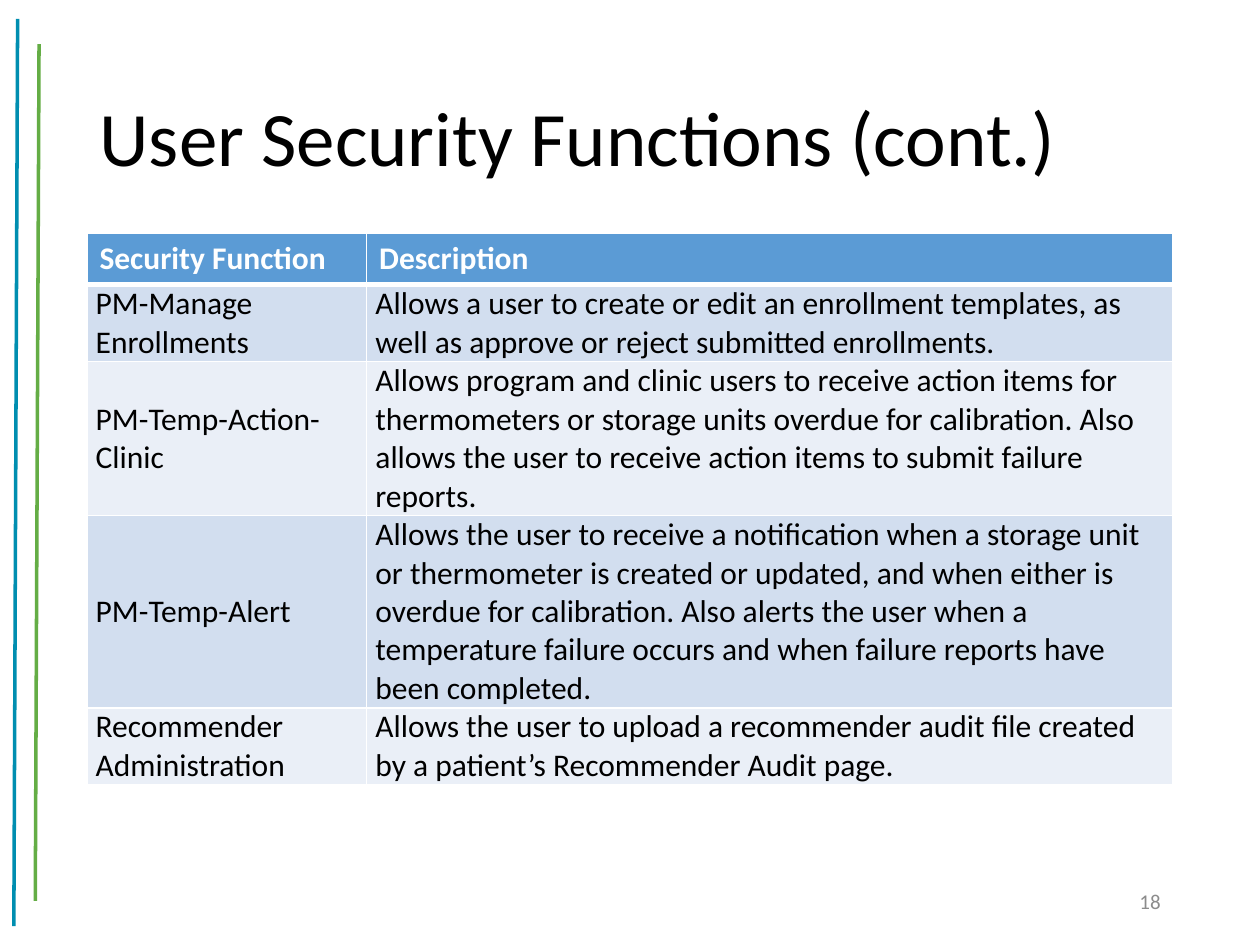
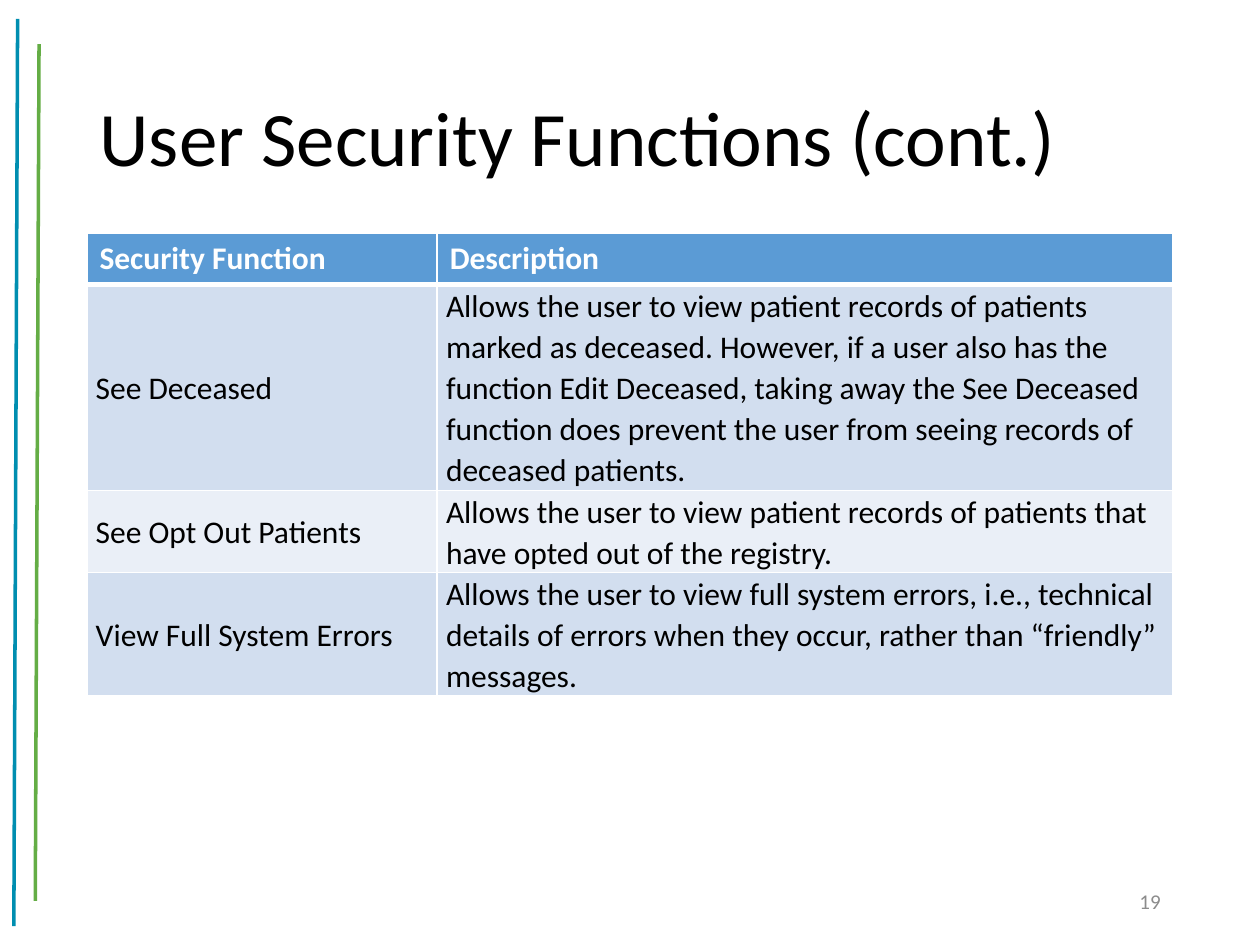
from lxml import etree
from pptx import Presentation
from pptx.dml.color import RGBColor
from pptx.enum.shapes import MSO_CONNECTOR
from pptx.enum.text import MSO_ANCHOR, MSO_AUTO_SIZE, PP_ALIGN
from pptx.oxml.ns import qn
from pptx.util import Inches, Pt

STRAIGHT = MSO_CONNECTOR.STRAIGHT
MIDDLE, TOP = MSO_ANCHOR.MIDDLE, MSO_ANCHOR.TOP
LEFT, RIGHT = PP_ALIGN.LEFT, PP_ALIGN.RIGHT
NO_AUTOFIT = MSO_AUTO_SIZE.NONE

FONT = "Calibri"
BLACK, WHITE, GREY = "000000", "FFFFFF", "8C8C8C"
TEAL, GREEN = "008EB0", "64AD45"
HEADER_FILL, BAND_FILLS = "5B9BD5", ("D2DEEF", "EAEFF7")

TITLE_LAYOUT = 5
TITLE_BOX = (0.69, 0.4, 8.62, 1.45)
TABLE_BOX = (0.69, 1.85, 8.62)
NUMBER_BOX = (7.06, 6.95, 2.25, 0.4)
SIDE_RULES = (
    (0.14, 0.15, 0.11, 7.35, TEAL),
    (0.31, 0.35, 0.28, 7.15, GREEN),
)
HEADER_HEIGHT, LINE_HEIGHT = 0.41, 0.3

TITLE = "User Security Functions (cont.)"
HEADINGS = ("Security Function", "Description")

PROGRAM_FUNCTIONS = (
    ("PM-Manage Enrollments",
     "Allows a user to create or edit an enrollment templates, as well as "
     "approve or reject submitted enrollments.", 2),
    ("PM-Temp-Action-Clinic",
     "Allows program and clinic users to receive action items for thermometers "
     "or storage units overdue for calibration. Also allows the user to receive "
     "action items to submit failure reports.", 4),
    ("PM-Temp-Alert",
     "Allows the user to receive a notification when a storage unit or "
     "thermometer is created or updated, and when either is overdue for "
     "calibration. Also alerts the user when a temperature failure occurs and "
     "when failure reports have been completed.", 5),
    ("Recommender Administration",
     "Allows the user to upload a recommender audit file created by a patient’s "
     "Recommender Audit page.", 2),
)
VIEW_FUNCTIONS = (
    ("See Deceased",
     "Allows the user to view patient records of patients marked as deceased. "
     "However, if a user also has the function Edit Deceased, taking away the "
     "See Deceased function does prevent the user from seeing records of "
     "deceased patients.", 5),
    ("See Opt Out Patients",
     "Allows the user to view patient records of patients that have opted out "
     "of the registry.", 2),
    ("View Full System Errors",
     "Allows the user to view full system errors, i.e., technical details of "
     "errors when they occur, rather than “friendly” messages.", 3),
)


def rgb(value):
    return RGBColor.from_string(value)


def style_paragraph(paragraph, size, color, bold=False, align=LEFT, spacing=None):
    paragraph.alignment = align
    paragraph.line_spacing = spacing
    font = paragraph.font
    font.name, font.size, font.bold = FONT, Pt(size), bold
    font.color.rgb = rgb(color)


def add_side_rules(slide):
    for x1, y1, x2, y2, color in SIDE_RULES:
        rule = slide.shapes.add_connector(
            STRAIGHT, Inches(x1), Inches(y1), Inches(x2), Inches(y2))
        rule.line.color.rgb = rgb(color)
        rule.line.width = Pt(2)
        etree.SubElement(rule.element.spPr, qn("a:effectLst"))


def set_title(slide, box):
    title = slide.shapes.title
    title.left, title.top, title.width, title.height = map(Inches, box)
    frame = title.text_frame
    frame.text = TITLE
    frame.auto_size = NO_AUTOFIT
    frame.vertical_anchor = MIDDLE
    style_paragraph(frame.paragraphs[0], 44, BLACK, spacing=0.9)


def add_page_number(slide, box, number):
    frame = slide.shapes.add_textbox(*map(Inches, box)).text_frame
    frame.word_wrap = True
    frame.vertical_anchor = MIDDLE
    frame.text = str(number)
    style_paragraph(frame.paragraphs[0], 12, GREY, align=RIGHT)


def set_borders(cell, top, bottom):
    properties = cell._tc.get_or_add_tcPr()
    for side, width in (("L", 1), ("R", 1), ("T", top), ("B", bottom)):
        border = etree.SubElement(properties, qn(f"a:ln{side}"), w=str(Pt(width)))
        fill = etree.SubElement(border, qn("a:solidFill"))
        etree.SubElement(fill, qn("a:srgbClr"), val=WHITE)


def fill_cell(cell, text, row, spacing):
    is_header = row == 0
    set_borders(cell, 3 if row == 1 else 1, 3 if is_header else 1)
    cell.fill.solid()
    cell.fill.fore_color.rgb = rgb(HEADER_FILL if is_header else BAND_FILLS[(row - 1) % 2])
    cell.text = text
    cell.vertical_anchor = TOP if is_header else MIDDLE
    if not is_header:
        cell.margin_left = cell.margin_right = Inches(0.07)
        cell.margin_top = cell.margin_bottom = 0
    style_paragraph(cell.text_frame.paragraphs[0], 18, WHITE if is_header else BLACK,
                    bold=is_header, spacing=None if is_header else spacing)


def add_function_table(slide, box, functions, name_width, spacing):
    left, top, width = box
    heights = [HEADER_HEIGHT] + [lines * LINE_HEIGHT * (spacing or 1)
                                 for *_, lines in functions]
    table = slide.shapes.add_table(
        len(heights), 2, Inches(left), Inches(top), Inches(width),
        Inches(sum(heights))).table
    table.columns[0].width = Inches(name_width)
    table.columns[1].width = Inches(width - name_width)
    entries = [HEADINGS] + [function[:2] for function in functions]
    for row, (height, texts) in enumerate(zip(heights, entries)):
        table.rows[row].height = Inches(height)
        for column, text in enumerate(texts):
            fill_cell(table.cell(row, column), text, row, spacing)


def add_function_slide(deck, number, functions, name_width, spacing=None):
    slide = deck.slides.add_slide(deck.slide_layouts[TITLE_LAYOUT])
    add_side_rules(slide)
    set_title(slide, TITLE_BOX)
    add_function_table(slide, TABLE_BOX, functions, name_width, spacing)
    add_page_number(slide, NUMBER_BOX, number)


def main():
    deck = Presentation()
    deck.slide_width, deck.slide_height = Inches(10), Inches(7.5)
    add_function_slide(deck, 18, PROGRAM_FUNCTIONS, 2.22)
    add_function_slide(deck, 19, VIEW_FUNCTIONS, 2.78, spacing=1.07)
    deck.save("out.pptx")


if __name__ == "__main__":
    main()
